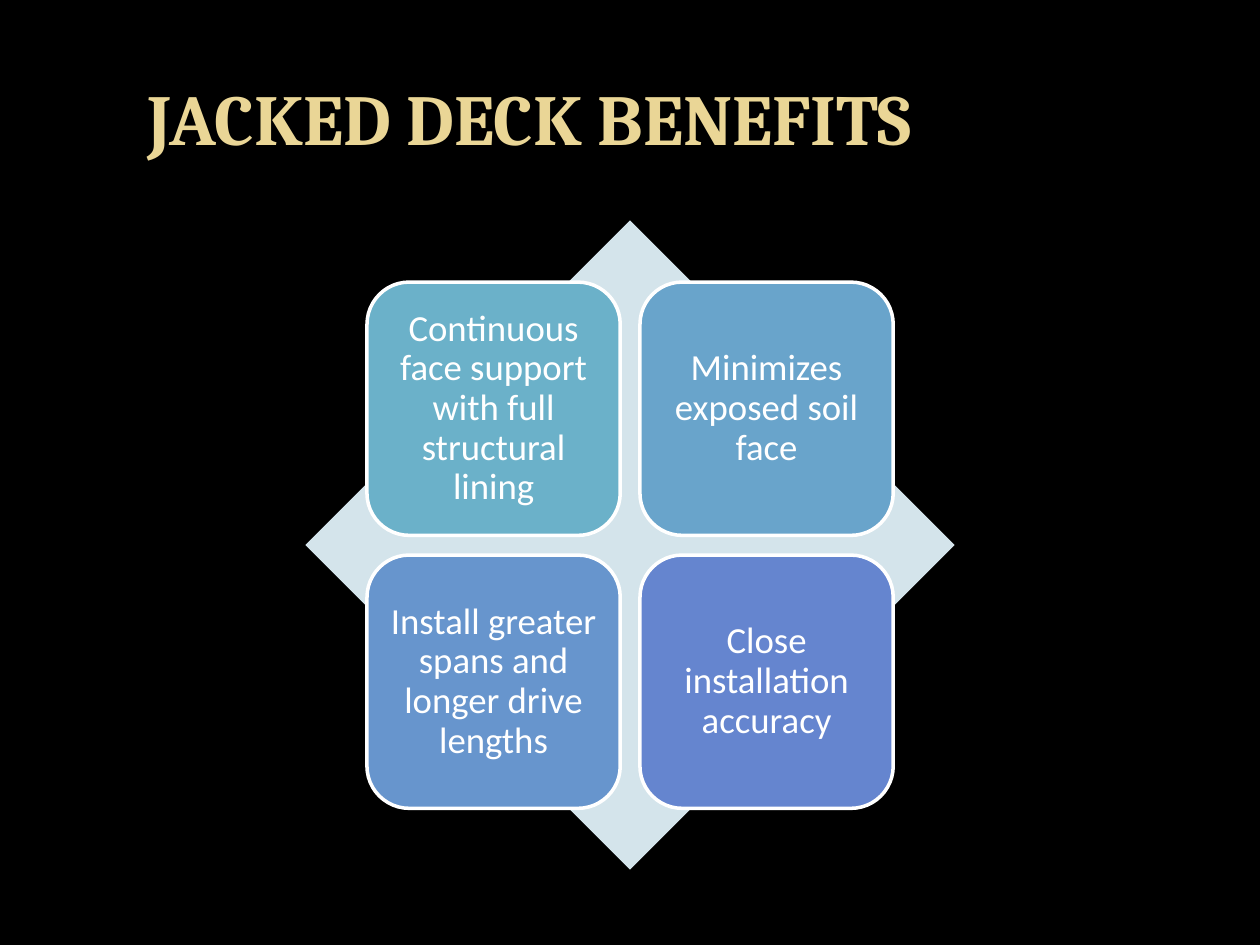
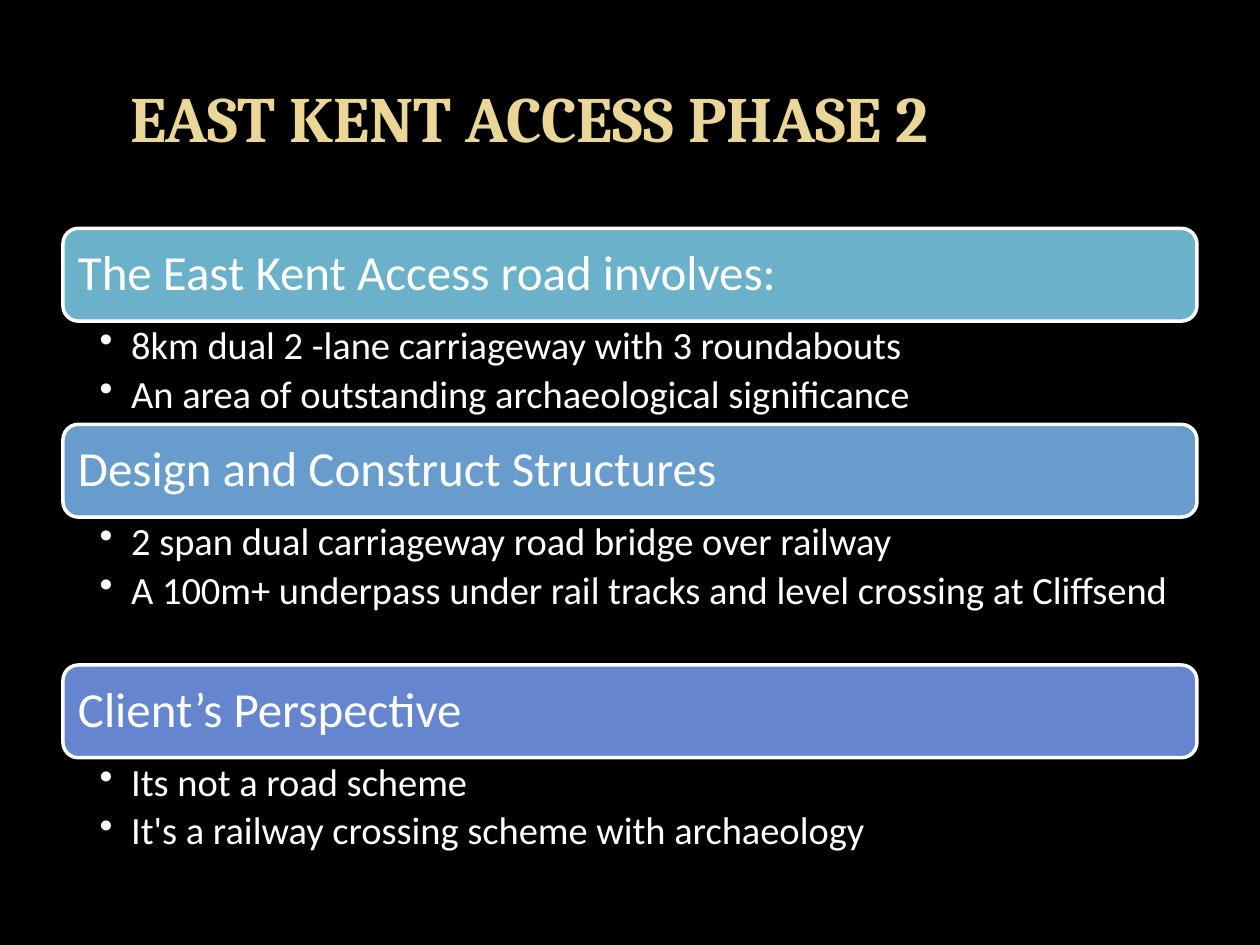
import pptx
import pptx.util
import pptx.dml.color
import pptx.enum.shapes
import pptx.enum.text
import lxml.etree

Pt = pptx.util.Pt
RGB = pptx.dml.color.RGBColor.from_string
KIND = pptx.enum.shapes.MSO_SHAPE
ALIGN = pptx.enum.text.PP_ALIGN
MID = pptx.enum.text.MSO_ANCHOR.MIDDLE
TOP = pptx.enum.text.MSO_ANCHOR.TOP
NONE = pptx.enum.text.MSO_AUTO_SIZE.NONE

theme = {
    "back": "000000", "gold": "EAD696", "white": "FFFFFF", "pale": "D4E4EB",
    "tiles": ["6BB1C9", "69A4CB", "6795CD", "6585CF"],
    "bars": ["6BB1C9", "689CCC", "6585CF"],
    "head": "Cambria", "body": "Calibri",
    "tile": 21, "bar": 28, "list": 22,
}


def write(frame, lines, font, pads, align, anchor=MID, color="white", mark=False):
    left, top, right, low = map(Pt, pads)
    form = {"word_wrap": True, "auto_size": NONE, "vertical_anchor": anchor,
            "margin_left": left, "margin_top": top,
            "margin_right": right, "margin_bottom": low}
    for key, val in form.items():
        setattr(frame, key, val)
    for num, line in enumerate(lines):
        para = frame.add_paragraph() if num else frame.paragraphs[0]
        para.alignment = align
        para.line_spacing = 0.9
        if mark:
            para.space_after = Pt(4)
            props = para._p.get_or_add_pPr()
            props.set("marL", str(Pt(18)))
            props.set("indent", str(Pt(-18)))
            dot = lxml.etree.SubElement(props, pptx.oxml.ns.qn("a:buChar"))
            dot.set("char", "•")
        run = para.add_run()
        run.text = line
        for key, val in font.items():
            setattr(run.font, key, val)
        run.font.color.rgb = RGB(theme[color])


def draw(slide, kind, box, fill, edge=True):
    shape = slide.shapes.add_shape(kind, *map(Pt, box))
    shape.shadow.inherit = False
    shape.fill.solid()
    shape.fill.fore_color.rgb = RGB(fill)
    if edge:
        shape.line.color.rgb = RGB(theme["white"])
        shape.line.width = Pt(2)
    else:
        shape.line.fill.background()
    return shape


deck = pptx.Presentation()
deck.slide_width, deck.slide_height = Pt(720), Pt(540)
ground = deck.slide_master.background.fill
ground.solid()
ground.fore_color.rgb = RGB(theme["back"])

slides = []
for text, size in [("JACKED DECK BENEFITS", 41), ("EAST KENT ACCESS PHASE 2", 36.9)]:
    slide = deck.slides.add_slide(deck.slide_layouts[5])
    title = slide.shapes.title
    place = {"left": 36, "top": 21.6, "width": 533.5, "height": 90}
    for key, val in place.items():
        setattr(title, key, Pt(val))
    font = {"name": theme["head"], "size": Pt(size), "bold": True}
    write(title.text_frame, [text], font, (7.2, 3.6, 7.2, 3.6), ALIGN.CENTER, color="gold")
    title.text_frame.paragraphs[0].line_spacing = 1.0
    slides.append(slide)

gains, scheme = slides
draw(gains, KIND.DIAMOND, (174.5, 126, 371, 371), theme["pale"], False)
points = [
    "Continuous face support with full structural lining",
    "Minimizes exposed soil face",
    "Install greater spans and longer drive lengths",
    "Close installation accuracy",
]
side, step = 144.7, 156
font = {"name": theme["body"], "size": Pt(theme["tile"])}
for num, (text, fill) in enumerate(zip(points, theme["tiles"])):
    row, col = divmod(num, 2)
    box = (209.7 + col * step, 161.2 + row * step, side, side)
    tile = draw(gains, KIND.ROUNDED_RECTANGLE, box, fill)
    write(tile.text_frame, [text], font, (1, 1, 1, 1), ALIGN.CENTER)

parts = [
    ("The East Kent Access road involves:", 59,
     ["8km dual 2 -lane carriageway with 3 roundabouts",
      "An area of outstanding archaeological significance"]),
    ("Design and Construct Structures", 84.5,
     ["2 span dual carriageway road bridge over railway",
      "A 100m+ underpass under rail tracks and level crossing at Cliffsend"]),
    ("Client’s Perspective", 59,
     ["Its not a road scheme",
      "It's a railway crossing scheme with archaeology"]),
]
left, top, width, high = 36, 130.5, 648, 53
for (head, deep, lines), fill in zip(parts, theme["bars"]):
    bar = draw(scheme, KIND.ROUNDED_RECTANGLE, (left, top, width, high), fill)
    font = {"name": theme["body"], "size": Pt(theme["bar"])}
    write(bar.text_frame, [head], font, (6, 6, 6, 6), ALIGN.LEFT)
    top += high
    body = scheme.shapes.add_textbox(*map(Pt, (left, top, width, deep)))
    font = {"name": theme["body"], "size": Pt(theme["list"])}
    write(body.text_frame, lines, font, (21, 3, 12, 3), ALIGN.LEFT, TOP, mark=True)
    top += deep

deck.save("out.pptx")
